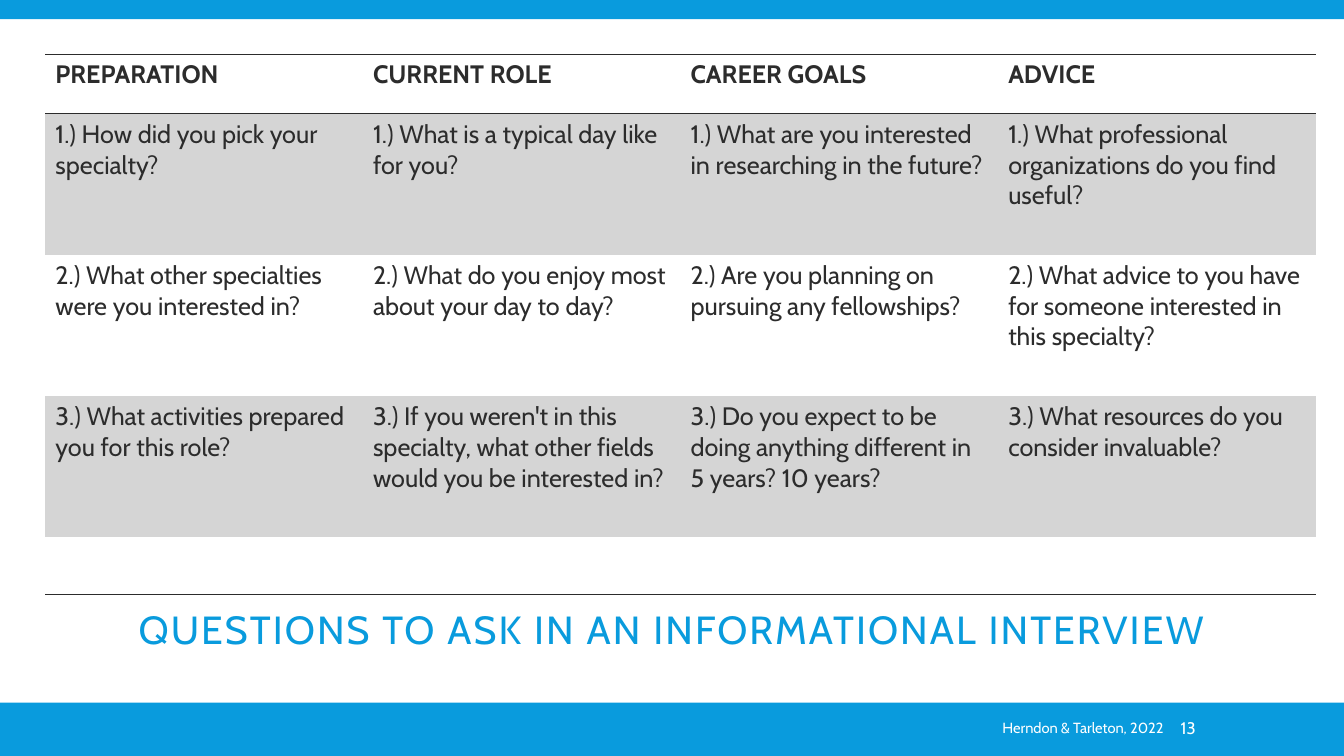
from lxml import etree
from pptx import Presentation
from pptx.dml.color import RGBColor
from pptx.enum.shapes import MSO_SHAPE
from pptx.enum.text import MSO_ANCHOR, PP_ALIGN
from pptx.oxml.ns import qn
from pptx.util import Inches, Pt

RECT = MSO_SHAPE.RECTANGLE
LEFT, CENTER, RIGHT = PP_ALIGN.LEFT, PP_ALIGN.CENTER, PP_ALIGN.RIGHT
MIDDLE, BOTTOM = MSO_ANCHOR.MIDDLE, MSO_ANCHOR.BOTTOM

FONT = "Cabin"
BLUE, DARK, GRAY, WHITE = "099BDD", "2C2C2C", "D5D5D5", "FFFFFF"
NO_STYLE = "{2D5ABB26-0587-4C30-8999-92F81FD0307C}"

SLIDE_WIDTH = 13.33
COLUMN_WIDTH = 3.15
ROW_HEIGHTS = [0.59, 1.4, 1.4, 1.4, 0.57]
SHADED_ROWS = (1, 3)
BORDERS = {0: ("a:lnT", "a:lnB"), 4: ("a:lnB",)}

QUESTIONS = [
    ["PREPARATION", "CURRENT ROLE", "CAREER GOALS", "ADVICE"],
    ["1.) How did you pick your specialty?",
     "1.) What is a typical day like for you?",
     "1.) What are you interested in researching in the future?",
     "1.) What professional organizations do you find useful?"],
    ["2.) What other specialties were you interested in?",
     "2.) What do you enjoy most about your day to day?",
     "2.) Are you planning on pursuing any fellowships?",
     "2.) What advice to you have for someone interested in this specialty?"],
    ["3.) What activities prepared you for this role?",
     "3.) If you weren't in this specialty, what other fields would you be interested in?",
     "3.) Do you expect to be doing anything different in 5 years? 10 years?",
     "3.) What resources do you consider invaluable?"],
    [""] * 4,
]


def rgb(color):
    return RGBColor.from_string(color)


def set_font(p, size, color, bold=False):
    p.font.name = FONT
    p.font.size = Pt(size)
    p.font.color.rgb = rgb(color)
    p.font.bold = bold


def add_band(s, top, height):
    band = s.shapes.add_shape(RECT, 0, Inches(top), Inches(SLIDE_WIDTH), Inches(height))
    band.shadow.inherit = False
    band.fill.solid()
    band.fill.fore_color.rgb = rgb(BLUE)
    band.line.fill.background()


def add_text(s, box, text, size, color, align, anchor):
    sp = s.shapes.add_textbox(*(Inches(v) for v in box))
    tf = sp.text_frame
    tf.word_wrap = True
    tf.vertical_anchor = anchor
    p = tf.paragraphs[0]
    p.alignment = align
    p.text = text
    set_font(p, size, color)
    return tf


def add_title(s, text):
    tf = add_text(s, (0.7, 5.8, 11.93, 0.72), text, 28, BLUE, CENTER, BOTTOM)
    p = tf.paragraphs[0]
    p.line_spacing = 0.8
    p.runs[0].font._element.set("spc", "150")


def add_borders(cell, tags):
    """Draw 1 pt dark lines; they must precede the fill in the cell properties."""
    tcPr = cell._tc.get_or_add_tcPr()
    for i, tag in enumerate(tags):
        ln = etree.Element(qn(tag), w=str(Pt(1)))
        fill = etree.SubElement(ln, qn("a:solidFill"))
        etree.SubElement(fill, qn("a:srgbClr"), val=DARK)
        tcPr.insert(i, ln)


def fill_cell(cell, row, text):
    if row in SHADED_ROWS:
        cell.fill.solid()
        cell.fill.fore_color.rgb = rgb(GRAY)
    else:
        cell.fill.background()
    add_borders(cell, BORDERS.get(row, ()))
    cell.text = text
    set_font(cell.text_frame.paragraphs[0], 18, DARK, bold=row == 0)


def add_question_table(s):
    columns = len(QUESTIONS[0])
    table = s.shapes.add_table(
        len(QUESTIONS), columns, Inches(0.45), Inches(0.54),
        Inches(COLUMN_WIDTH * columns), Inches(sum(ROW_HEIGHTS))).table
    table._tbl.tblPr.find(qn("a:tableStyleId")).text = NO_STYLE
    table.horz_banding = False
    for column in table.columns:
        column.width = Inches(COLUMN_WIDTH)
    for row, (height, texts) in enumerate(zip(ROW_HEIGHTS, QUESTIONS)):
        table.rows[row].height = Inches(height)
        for col, text in enumerate(texts):
            fill_cell(table.cell(row, col), row, text)


def add_footer(s):
    source = add_text(s, (6.12, 7.02, 5.52, 0.4), "Herndon & Tarleton, 2022",
                      10.5, WHITE, RIGHT, MIDDLE)
    number = add_text(s, (11.66, 7.02, 1.03, 0.4), "13", 12, WHITE, LEFT, MIDDLE)
    number.margin_left = Inches(0.05)
    for tf in (source, number):
        tf.paragraphs[0].space_after = Pt(6)


def main():
    prs = Presentation()
    prs.slide_width = Inches(SLIDE_WIDTH)
    prs.slide_height = Inches(7.5)
    s = prs.slides.add_slide(prs.slide_layouts[6])
    add_title(s, "QUESTIONS TO ASK IN AN INFORMATIONAL INTERVIEW")
    add_band(s, 0, 0.19)
    add_band(s, 6.97, 0.53)
    add_footer(s)
    add_question_table(s)
    prs.save("out.pptx")


if __name__ == "__main__":
    main()
